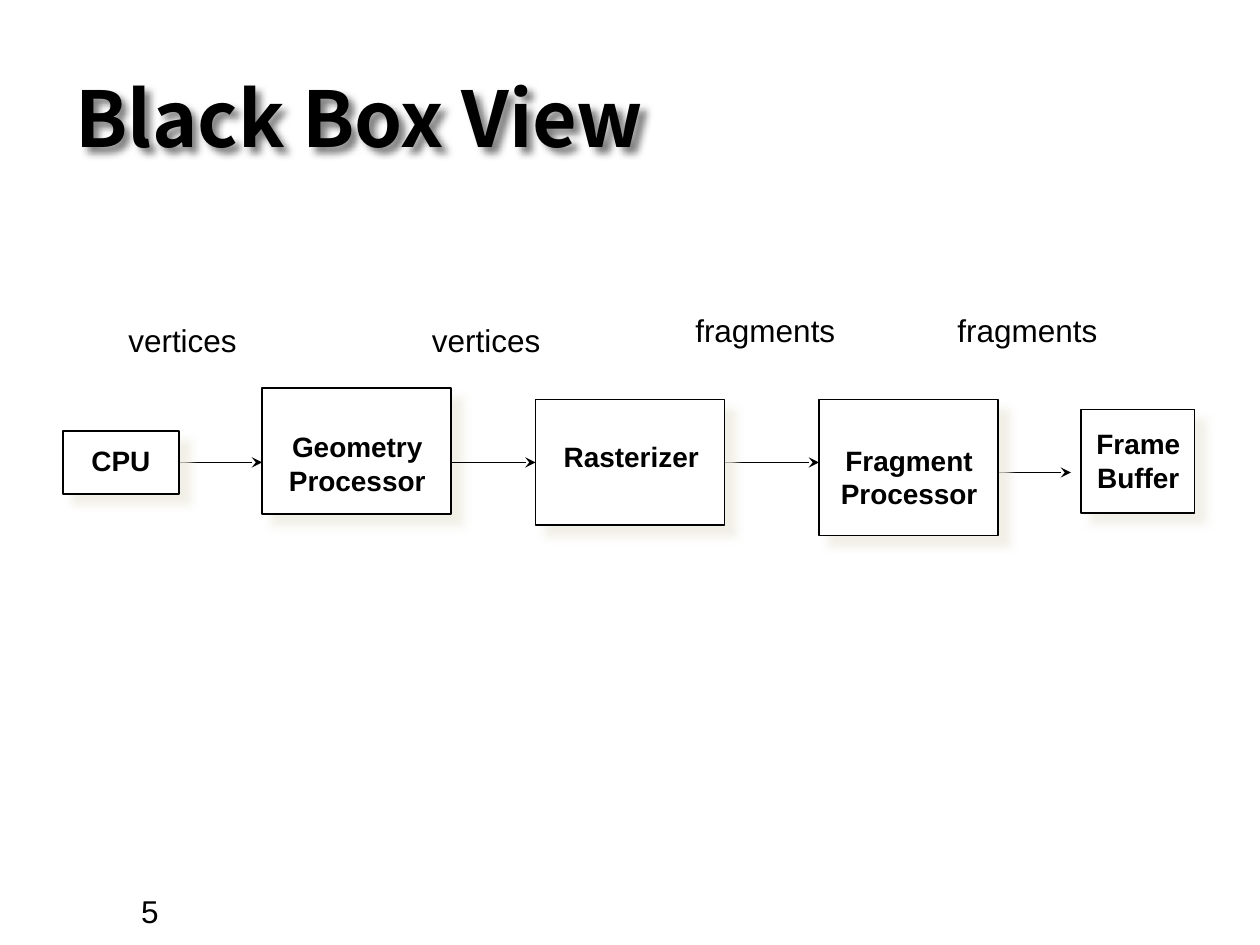
from dataclasses import dataclass

from lxml import etree
from pptx import Presentation
from pptx.dml.color import RGBColor
from pptx.enum.shapes import MSO_CONNECTOR, MSO_SHAPE
from pptx.enum.text import MSO_ANCHOR, PP_ALIGN
from pptx.oxml.ns import qn
from pptx.util import Inches, Pt

BLACK = RGBColor(0x00, 0x00, 0x00)
WHITE = RGBColor(0xFF, 0xFF, 0xFF)
SHADOW = RGBColor(0xEE, 0xEC, 0xE1)
RECTANGLE = MSO_SHAPE.RECTANGLE
STRAIGHT = MSO_CONNECTOR.STRAIGHT
CENTER, LEFT = PP_ALIGN.CENTER, PP_ALIGN.LEFT
TOP, MIDDLE = MSO_ANCHOR.TOP, MSO_ANCHOR.MIDDLE
LEFT_SIDE, RIGHT_SIDE = 1, 3

TITLE_FONT = {"name": "Noto Sans CJK SC", "size": Pt(44), "bold": True}
STAGE_FONT = {"name": "Arial", "size": Pt(16), "bold": True}
LABEL_FONT = {"name": "Arial", "size": Pt(18), "bold": False}


@dataclass(frozen=True)
class Box:
    left: float
    top: float
    width: float
    height: float

    def lengths(self) -> list:
        return [Inches(v) for v in (self.left, self.top, self.width, self.height)]


@dataclass(frozen=True)
class Stage:
    lines: tuple
    frame: Box
    caption: Box


@dataclass(frozen=True)
class Flow:
    start: float
    end: float
    y: float


GEOMETRY = Stage(("Geometry", "Processor"), Box(2.08, 3.08, 1.5, 1), Box(2.19, 3.36, 1.29, 0.64))
CPU = Stage(("CPU",), Box(0.5, 3.42, 0.92, 0.5), Box(0.62, 3.47, 0.68, 0.37))
RASTERIZER = Stage(("Rasterizer",), Box(4.25, 3.17, 1.5, 1), Box(4.37, 3.44, 1.28, 0.37))
FRAGMENT = Stage(("Fragment", "Processor"), Box(6.5, 3.17, 1.42, 1.08), Box(6.57, 3.47, 1.29, 0.64))
FRAME_BUFFER = Stage(("Frame", "Buffer"), Box(8.58, 3.25, 0.9, 0.82), Box(8.6, 3.34, 0.87, 0.64))

FLOWS = (
    Flow(1.42, 2.08, 3.67),
    Flow(3.58, 4.25, 3.67),
    Flow(5.75, 6.5, 3.67),
    Flow(7.92, 8.5, 3.75),
)

FLOW_LABELS = (
    ("vertices", Box(0.92, 2.5, 1.24, 0.5)),
    ("vertices", Box(3.33, 2.5, 1.24, 0.5)),
    ("fragments", Box(5.42, 2.42, 1.53, 0.5)),
    ("fragments", Box(7.5, 2.42, 1.53, 0.5)),
)


def add_shadow(shape, color: RGBColor, alpha: int, blur: float, distance: float) -> None:
    """Cast a soft shadow down and to the right."""
    effects = etree.SubElement(shape._element.spPr, qn("a:effectLst"))
    shadow = etree.SubElement(
        effects, qn("a:outerShdw"), blurRad=str(Pt(blur)), dist=str(Pt(distance)),
        dir=str(45 * 60000), algn="tl", rotWithShape="0",
    )
    tint = etree.SubElement(shadow, qn("a:srgbClr"), val=str(color))
    etree.SubElement(tint, qn("a:alpha"), val=str(alpha * 1000))


def add_text(shapes, lines: tuple, box: Box, font: dict, align=LEFT, anchor=TOP, wrap=True):
    text = shapes.add_textbox(*box.lengths())
    frame = text.text_frame
    frame.word_wrap = wrap
    frame.vertical_anchor = anchor
    for index, line in enumerate(lines):
        paragraph = frame.paragraphs[0] if index == 0 else frame.add_paragraph()
        paragraph.alignment = align
        run = paragraph.add_run()
        run.text = line
        for attribute, value in font.items():
            setattr(run.font, attribute, value)
        run.font.color.rgb = BLACK
    return text


def add_stage(slide, stage: Stage):
    """Draw a captioned box and return its rectangle."""
    shapes = slide.shapes.add_group_shape().shapes
    rectangle = shapes.add_shape(RECTANGLE, *stage.frame.lengths())
    rectangle.fill.solid()
    rectangle.fill.fore_color.rgb = WHITE
    rectangle.line.color.rgb = BLACK
    rectangle.line.width = Pt(1)
    add_shadow(rectangle, SHADOW, alpha=75, blur=5, distance=8.5)
    add_text(shapes, stage.lines, stage.caption, STAGE_FONT, CENTER, wrap=False)
    return rectangle


def add_arrow(slide, flow: Flow):
    y = Inches(flow.y)
    arrow = slide.shapes.add_connector(STRAIGHT, Inches(flow.start), y, Inches(flow.end), y)
    arrow.line.color.rgb = BLACK
    arrow.line.width = Pt(1)
    etree.SubElement(arrow.line._get_or_add_ln(), qn("a:tailEnd"), type="stealth")
    etree.SubElement(arrow._element.spPr, qn("a:effectLst"))
    return arrow


def main() -> None:
    presentation = Presentation()
    presentation.slide_width, presentation.slide_height = Inches(10), Inches(7.5)
    slide = presentation.slides.add_slide(presentation.slide_layouts[6])

    # Title
    title = add_text(slide.shapes, ("Black Box View",), Box(0.5, 0.3, 7.18, 1.25),
                     TITLE_FONT, anchor=MIDDLE)
    add_shadow(title, BLACK, alpha=50, blur=4, distance=4)

    # Pipeline: the arrows lie over the geometry box and under the other shadows
    add_stage(slide, GEOMETRY)
    to_geometry, to_rasterizer, to_fragment, _ = [add_arrow(slide, flow) for flow in FLOWS]
    cpu, rasterizer, _, _ = [
        add_stage(slide, stage) for stage in (CPU, RASTERIZER, FRAGMENT, FRAME_BUFFER)
    ]
    to_geometry.begin_connect(cpu, RIGHT_SIDE)
    to_rasterizer.end_connect(rasterizer, LEFT_SIDE)
    to_fragment.begin_connect(rasterizer, RIGHT_SIDE)

    # Data passed between stages
    for label, box in FLOW_LABELS:
        add_text(slide.shapes, (label,), box, LABEL_FONT)

    # Page number
    number = add_text(slide.shapes, ("5",), Box(0.5, 7.08, 2.33, 0.3), LABEL_FONT, anchor=MIDDLE)
    number.text_frame.margin_left = Inches(0.12)
    number.text_frame.paragraphs[0]._p.get_or_add_pPr().set("marL", str(Inches(0.5)))

    presentation.save("out.pptx")


if __name__ == "__main__":
    main()
